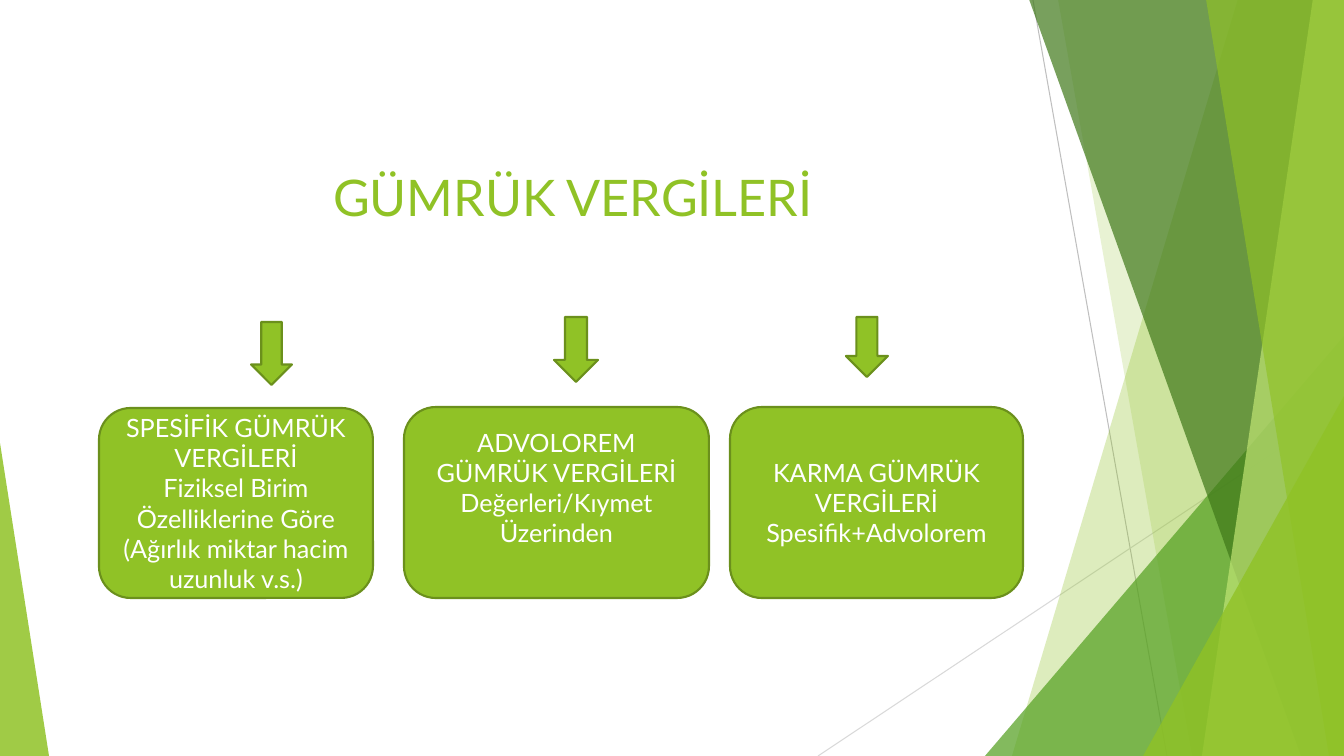
from dataclasses import dataclass

from lxml import etree
from pptx import Presentation
from pptx.dml.color import RGBColor
from pptx.enum.shapes import MSO_CONNECTOR, MSO_SHAPE
from pptx.enum.text import MSO_ANCHOR, PP_ALIGN
from pptx.oxml.ns import qn
from pptx.util import Pt

STRAIGHT = MSO_CONNECTOR.STRAIGHT
TRIANGLE = MSO_SHAPE.ISOSCELES_TRIANGLE
ROUNDED = MSO_SHAPE.ROUNDED_RECTANGLE
DOWN_ARROW = MSO_SHAPE.DOWN_ARROW
CENTER = PP_ALIGN.CENTER
TOP, MIDDLE = MSO_ANCHOR.TOP, MSO_ANCHOR.MIDDLE


@dataclass(frozen=True)
class Theme:
    font: str = "Lato"
    title_size: int = 36
    body_size: int = 18
    green: str = "90C226"
    outline: str = "6B901C"
    white: str = "FFFFFF"
    leaf: str = "54A021"
    forest: str = "3F7819"
    lime: str = "C0E474"
    gray: str = "BFBFBF"
    light_gray: str = "D9D9D9"


THEME = Theme()
WIDTH, HEIGHT = 1344, 756
EMU_PER_PX = 914400 / 100.8

# Content: boxes are left, top, width, height in px
TITLE = "GÜMRÜK VERGİLERİ"
TITLE_BOX = (99, 161, 948, 145)
# Tax box, its paragraphs, extra space below the text, and the arrow above
TAXES = [
    ((99, 408, 274, 190),
     ["SPESİFİK GÜMRÜK VERGİLERİ", "Fiziksel Birim Özelliklerine Göre",
      "(Ağırlık miktar hacim uzunluk v.s.)"], 0, (251, 322, 41, 63)),
    ((404, 407, 305, 191),
     ["ADVOLOREM\vGÜMRÜK VERGİLERİ", "Değerleri/Kıymet Üzerinden"], 30,
     (554, 317, 44, 65)),
    ((730, 407, 293, 191),
     ["KARMA GÜMRÜK", "VERGİLERİ", "Spesifik+Advolorem"], 0,
     (846, 317, 42, 60)),
]

# Decoration, from back to front
RAYS = [
    ((1033, 0), (1167, HEIGHT), THEME.gray),
    ((WIDTH, 406), (818, HEIGHT), THEME.light_gray),
]
# Bands reach the right edge: top-left x, bottom-left x, colour, opacity
# Corners are triangles: left, top, width, apex (0 left, 1 right), colour, opacity
FACETS = [
    ("band", (1238, 1012, THEME.green, 30)),
    ("band", (1058, 1192, THEME.green, 20)),
    ("corner", (985, 336, 359, 1, THEME.leaf, 72)),
    ("band", (1029, 1301, THEME.forest, 70)),
    ("band", (1313, 1202, THEME.lime, 70)),
    ("band", (1206, 1329, THEME.green, 65)),
    ("corner", (1143, 396, 201, 1, THEME.green, 80)),
    ("corner", (0, 443, 49, 0, THEME.green, 85)),
]


def emu(*lengths):
    return [round(length * EMU_PER_PX) for length in lengths]


def paint(shape, color, opacity=100, outline=None):
    shape.shadow.inherit = False
    shape.fill.solid()
    shape.fill.fore_color.rgb = RGBColor.from_string(color)
    if opacity < 100:
        color_element = shape.fill._xPr.find(".//" + qn("a:srgbClr"))
        alpha = etree.SubElement(color_element, qn("a:alpha"))
        alpha.set("val", str(opacity * 1000))
    if outline:
        shape.line.color.rgb = RGBColor.from_string(outline)
        shape.line.width = Pt(1.5)
    else:
        shape.line.fill.background()


def write(shape, paragraphs, size, color, anchor):
    frame = shape.text_frame
    frame.word_wrap = True
    frame.vertical_anchor = anchor
    frame.text = "\n".join(paragraphs)
    for paragraph in frame.paragraphs:
        paragraph.alignment = CENTER
        paragraph.font.name = THEME.font
        paragraph.font.size = Pt(size)
        paragraph.font.color.rgb = RGBColor.from_string(color)


def add_ray(shapes, start, end, color):
    ray = shapes.add_connector(STRAIGHT, *emu(*start, *end))
    ray.line.color.rgb = RGBColor.from_string(color)
    ray.line.width = Pt(0.75)
    etree.SubElement(ray._element.spPr, qn("a:effectLst"))


def add_band(shapes, top_x, bottom_x, color, opacity):
    builder = shapes.build_freeform(top_x, -1, scale=EMU_PER_PX)
    builder.add_line_segments([(WIDTH, -1), (WIDTH, HEIGHT), (bottom_x, HEIGHT)])
    paint(builder.convert_to_shape(), color, opacity)


def add_corner(shapes, left, top, width, apex, color, opacity):
    corner = shapes.add_shape(TRIANGLE, *emu(left, top, width, HEIGHT - top))
    corner.adjustments[0] = apex
    paint(corner, color, opacity)


def main():
    presentation = Presentation()
    presentation.slide_width, presentation.slide_height = emu(WIDTH, HEIGHT)
    slide = presentation.slides.add_slide(presentation.slide_layouts[5])
    shapes = slide.shapes

    # Background facets
    for ray in RAYS:
        add_ray(shapes, *ray)
    add_facet = {"band": add_band, "corner": add_corner}
    for kind, facet in FACETS:
        add_facet[kind](shapes, *facet)

    # Title
    title = shapes.title
    title.left, title.top, title.width, title.height = emu(*TITLE_BOX)
    write(title, [TITLE], THEME.title_size, THEME.green, TOP)

    # Tax boxes with their arrows
    for box, paragraphs, space_below, arrow_box in TAXES:
        tax = shapes.add_shape(ROUNDED, *emu(*box))
        paint(tax, THEME.green, outline=THEME.outline)
        write(tax, paragraphs, THEME.body_size, THEME.white, MIDDLE)
        tax.text_frame.margin_bottom += emu(space_below)[0]
        arrow = shapes.add_shape(DOWN_ARROW, *emu(*arrow_box))
        paint(arrow, THEME.green, outline=THEME.outline)

    presentation.save("out.pptx")


if __name__ == "__main__":
    main()
